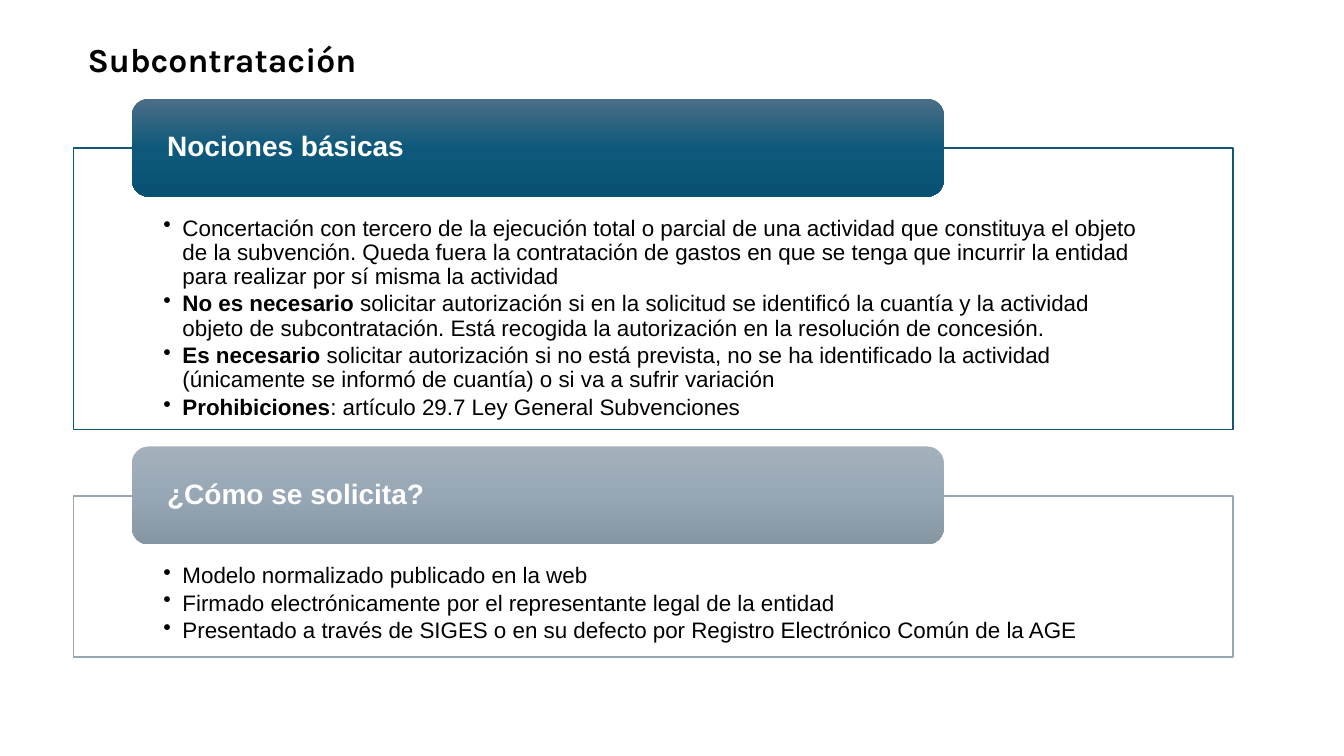
from pptx import Presentation
from pptx.dml.color import RGBColor
from pptx.enum.shapes import MSO_SHAPE as Kind
from pptx.enum.text import MSO_ANCHOR as Anchor, MSO_AUTO_SIZE as Fit, PP_ALIGN as Align
from pptx.oxml import parse_xml
from pptx.oxml.ns import nsdecls
from pptx.util import Emu, Pt


def px(n):
    return Emu(n * 9144)


def tint(code):
    return RGBColor.from_string(code)


class Page:
    face = "Arial"
    head = "Karla"
    dark = "000000"
    light = "FFFFFF"

    def __init__(self, slide):
        self.shapes = slide.shapes

    def style(self, font, size, color, face, bold=False):
        font.size = Pt(size)
        font.name = face
        font.bold = bold
        font.color.rgb = tint(color)

    def inset(self, frame, left, top, right, bottom):
        frame.word_wrap = True
        frame.margin_left, frame.margin_top = px(left), px(top)
        frame.margin_right, frame.margin_bottom = px(right), px(bottom)

    def block(self, kind, box):
        shape = self.shapes.add_shape(kind, *map(px, box))
        shape.shadow.inherit = False
        return shape

    def title(self, text, box):
        frame = self.shapes.add_textbox(*map(px, box)).text_frame
        frame.word_wrap = True
        frame.auto_size = Fit.SHAPE_TO_FIT_TEXT
        frame.text = text
        self.style(frame.paragraphs[0].runs[0].font, 24, self.dark, self.head, True)

    def bullet(self, para, lead, rest):
        props = para._p.get_or_add_pPr()
        props.set("marL", str(px(19)))
        props.set("indent", str(-px(19)))
        props.append(parse_xml(f'<a:buChar {nsdecls("a")} char="•"/>'))
        para.level = 1
        para.alignment = Align.LEFT
        para.line_spacing = 0.9
        para.space_after = Pt(2.4)
        for text, bold in ((lead, True), (rest, False)):
            if text:
                run = para.add_run()
                run.text = text
                self.style(run.font, 16, self.dark, self.face, bold)

    def panel(self, items, box, edge):
        shape = self.block(Kind.RECTANGLE, box)
        shape.fill.solid()
        shape.fill.fore_color.rgb = tint(self.light)
        shape.line.color.rgb = tint(edge)
        shape.line.width = Pt(1)
        frame = shape.text_frame
        self.inset(frame, 89, 68, 89, 12)
        frame.vertical_anchor = Anchor.TOP
        for i, (lead, rest) in enumerate(items):
            para = frame.add_paragraph() if i else frame.paragraphs[0]
            self.bullet(para, lead, rest)

    def banner(self, text, box, shades):
        shape = self.block(Kind.ROUNDED_RECTANGLE, box)
        shape.line.fill.background()
        stops = "".join(
            f'<a:gs pos="{i * 50000}"><a:srgbClr val="{code}"/></a:gs>'
            for i, code in enumerate(shades)
        )
        shape._element.spPr.insert(2, parse_xml(
            f'<a:gradFill {nsdecls("a")} rotWithShape="1"><a:gsLst>{stops}</a:gsLst>'
            '<a:lin ang="5400000" scaled="0"/></a:gradFill>'
        ))
        frame = shape.text_frame
        self.inset(frame, 30, 0, 30, 0)
        frame.vertical_anchor = Anchor.MIDDLE
        frame.text = text
        para = frame.paragraphs[0]
        para.alignment = Align.LEFT
        para.line_spacing = 0.9
        self.style(para.runs[0].font, 20, self.light, self.face, True)

    def section(self, name, items, top, tall, edge, shades):
        self.panel(items, (73, top, 1150, tall), edge)
        self.banner(name, (131, top - 49, 805, 97), shades)


BASICS = [
    ("", "Concertación con tercero de la ejecución total o parcial de una actividad "
         "que constituya el objeto de la subvención. Queda fuera la contratación de "
         "gastos en que se tenga que incurrir la entidad para realizar por sí misma "
         "la actividad"),
    ("No es necesario ", "solicitar autorización si en la solicitud se identificó la "
                         "cuantía y la actividad objeto de subcontratación. Está "
                         "recogida la autorización en la resolución de concesión."),
    ("Es necesario ", "solicitar autorización si no está prevista, no se ha "
                      "identificado la actividad (únicamente se informó de cuantía) "
                      "o si va a sufrir variación"),
    ("Prohibiciones", ": artículo 29.7 Ley General Subvenciones"),
]
STEPS = [
    ("", "Modelo normalizado publicado en la web"),
    ("", "Firmado electrónicamente por el representante legal de la entidad"),
    ("", "Presentado a través de SIGES o en su defecto por Registro Electrónico "
         "Común de la AGE"),
]


def main():
    deck = Presentation()
    deck.slide_width, deck.slide_height = px(1333), px(750)
    page = Page(deck.slides.add_slide(deck.slide_layouts[6]))
    page.section("Nociones básicas", BASICS, 147, 279, "135776",
                 ("4C6E87", "0E597B", "085172"))
    page.section("¿Cómo se solicita?", STEPS, 492, 160, "98A7B4",
                 ("A4B1BC", "97A7B5", "8595A2"))
    page.title("Subcontratación", (77, 34, 571, 50))
    deck.save("out.pptx")


if __name__ == "__main__":
    main()
